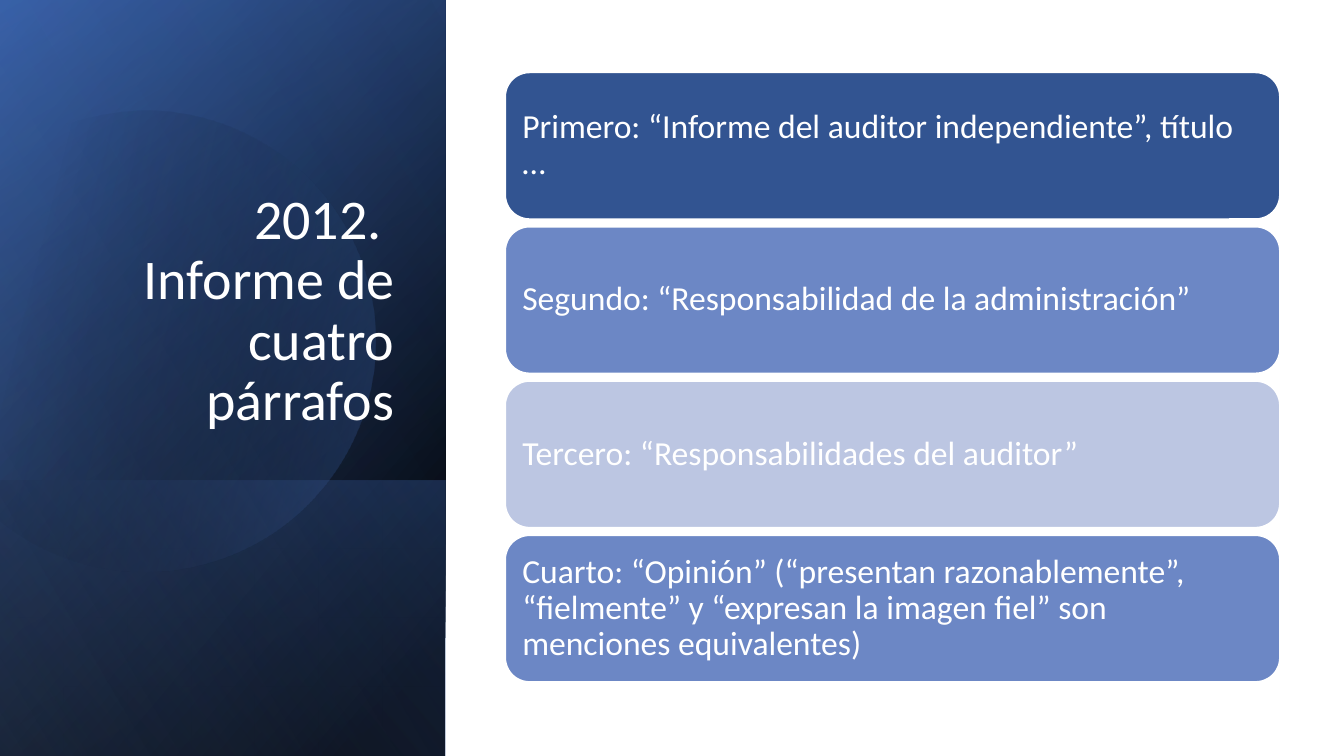
from lxml import etree
from pptx import Presentation
from pptx.dml.color import RGBColor
from pptx.enum.shapes import MSO_SHAPE
from pptx.enum.text import MSO_ANCHOR, PP_ALIGN
from pptx.oxml.ns import qn
from pptx.util import Pt

RECT, ROUNDED = MSO_SHAPE.RECTANGLE, MSO_SHAPE.ROUNDED_RECTANGLE
MIDDLE, BOTTOM = MSO_ANCHOR.MIDDLE, MSO_ANCHOR.BOTTOM
LEFT, RIGHT = PP_ALIGN.LEFT, PP_ALIGN.RIGHT

TITLE = "2012. \vInforme de cuatro párrafos"
PARAGRAPHS = [
    ("Primero: “Informe del auditor independiente”, título …", "dark"),
    ("Segundo: “Responsabilidad de la administración”", "medium"),
    ("Tercero: “Responsabilidades del auditor”", "light"),
    ("Cuarto: “Opinión” (“presentan razonablemente”, “fielmente” y "
     "“expresan la imagen fiel” son menciones equivalentes)", "medium"),
]
THEME = {
    "font": "Calibri", "title_size": 40, "card_size": 24,
    "white": "FFFFFF", "black": "000000", "navy": "2F5597",
    "blue": "4472C4", "sky": "8FAADC",
    "dark": "325491", "medium": "6C87C5", "light": "BCC6E2",
}

SLIDE_W, SLIDE_H = 960, 540
PANEL_W = 318.24
FOOT_H = 197
CARD_X, CARD_Y, CARD_W, CARD_H, CARD_GAP = 360.7, 51.6, 553.7, 105.1, 5.1
CARD_INSET = 12.3

BASE = ((8, "black", 100), (100, "navy", 100), 50)
GLOW = ((0, "black", 0), (99, "blue", 46), 30)
FOOT = ((2, "blue", 29), (100, "black", 30), 130)
DISC = ((29, "black", 0), (100, "blue", 43), 30)
SHEEN = ((0, "black", 0), (99, "sky", 11), 120)

DISC_CENTER = (114.1, 240.8)
DISC_ROTATION = 343.9
DISC_START = (38.2, -157.2)
DISC_SEGMENTS = [
    [(105, -136.4), (153.5, -73.4), (153.5, 0)],
    [(153.5, 90.7), (79.6, 164.3), (-11.1, 164.3)],
    [(-68, 164.3), (-118.2, 135.6), (-147.5, 91.9)],
    [(-153.6, 81.9)],
    [(-88.2, -145)],
    [(-75, -151.6)],
    [(-55.3, -160.2), (-33.8, -164.5), (-11.3, -164.5)],
    [(5.8, -164.3), (22.3, -161.8), DISC_START],
]


def color(name):
    return RGBColor.from_string(THEME[name])


def write(tf, text, size, align=LEFT, anchor=MIDDLE, inset=(7.2, 3.6)):
    tf.word_wrap = True
    tf.vertical_anchor = anchor
    tf.margin_left = tf.margin_right = Pt(inset[0])
    tf.margin_top = tf.margin_bottom = Pt(inset[1])
    p = tf.paragraphs[0]
    p.text = text
    p.alignment = align
    p.line_spacing = 0.9
    for r in p.runs:
        r.font.name = THEME["font"]
        r.font.size = Pt(THEME[size])
        r.font.color.rgb = color("white")


def shade(sp, gradient):
    *stops, angle = gradient
    sp.shadow.inherit = False
    sp.line.fill.background()
    sp.fill.gradient()
    sp.fill.gradient_angle = 360 - angle
    for stop, (position, name, _) in zip(sp.fill.gradient_stops, stops):
        stop.position = position / 100
        stop.color.rgb = color(name)
    tints = sp._element.spPr.iter(qn("a:srgbClr"))
    for tint, (_, _, alpha) in zip(tints, stops):
        etree.SubElement(tint, qn("a:alpha"), val=str(alpha * 1000))


def add_panel(s, top, height, gradient):
    x = (PANEL_W - height) / 2
    y = top + (height - PANEL_W) / 2
    sp = s.shapes.add_shape(RECT, Pt(x), Pt(y), Pt(height), Pt(PANEL_W))
    sp.rotation = 90
    sp._element.spPr.find(qn("a:xfrm")).set("flipH", "1")
    shade(sp, gradient)


def on_slide(point):
    return tuple(Pt(c + d) for c, d in zip(DISC_CENTER, point))


def add_disc(s):
    outline = s.shapes.build_freeform(*on_slide(DISC_START))
    points = [on_slide(point) for segment in DISC_SEGMENTS for point in segment]
    outline.add_line_segments(points, close=True)
    sp = outline.convert_to_shape()
    lines = iter(list(sp._element.spPr.iter(qn("a:lnTo"))))
    for segment in DISC_SEGMENTS:
        first, *rest = [next(lines) for _ in segment]
        if rest:
            first.tag = qn("a:cubicBezTo")
        for line in rest:
            first.append(line[0])
            line.getparent().remove(line)
    sp.rotation = DISC_ROTATION
    shade(sp, DISC)


def add_card(s, index, text, fill):
    y = CARD_Y + index * (CARD_H + CARD_GAP)
    sp = s.shapes.add_shape(ROUNDED, Pt(CARD_X), Pt(y), Pt(CARD_W), Pt(CARD_H))
    sp.shadow.inherit = False
    sp.fill.solid()
    sp.fill.fore_color.rgb = color(fill)
    sp.line.color.rgb = color("white")
    sp.line.width = Pt(1.5)
    inset = CARD_INSET - CARD_H * sp.adjustments[0] * 0.29
    write(sp.text_frame, text, "card_size", inset=(inset, inset))


def main():
    prs = Presentation()
    prs.slide_width, prs.slide_height = Pt(SLIDE_W), Pt(SLIDE_H)
    s = prs.slides.add_slide(prs.slide_layouts[6])

    add_panel(s, 0, SLIDE_H, BASE)
    add_panel(s, 0, SLIDE_H, GLOW)
    add_panel(s, SLIDE_H - FOOT_H, FOOT_H, FOOT)
    add_disc(s)
    add_panel(s, 0, SLIDE_H, SHEEN)

    title = s.shapes.add_textbox(Pt(36.7), Pt(46.4), Pt(252), Pt(266.4))
    write(title.text_frame, TITLE, "title_size", align=RIGHT, anchor=BOTTOM)

    for i, (text, fill) in enumerate(PARAGRAPHS):
        add_card(s, i, text, fill)

    prs.save("out.pptx")


if __name__ == "__main__":
    main()
